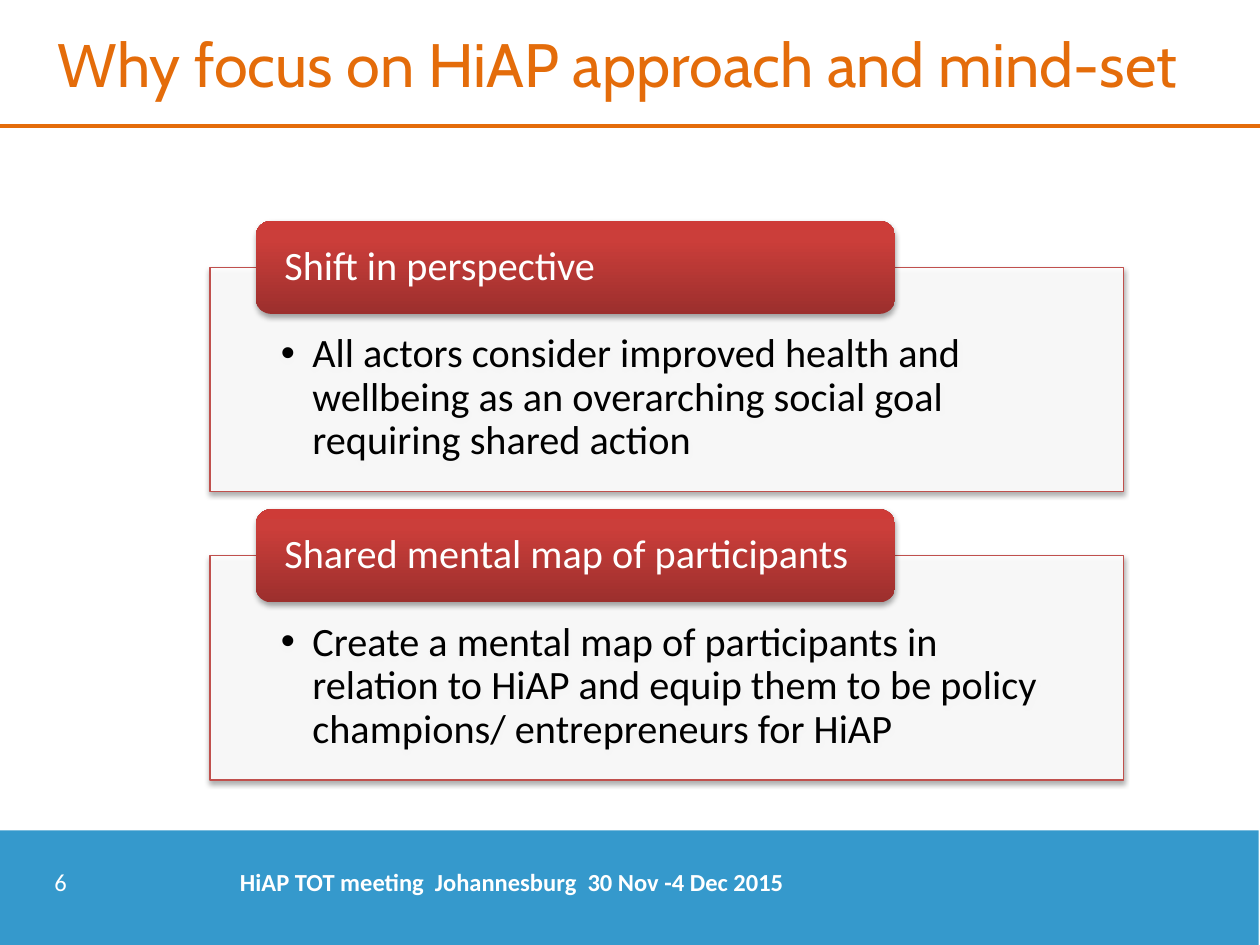
from lxml import etree
from pptx import Presentation
from pptx.dml.color import RGBColor
from pptx.enum.shapes import MSO_CONNECTOR, MSO_SHAPE
from pptx.enum.text import MSO_ANCHOR, PP_ALIGN
from pptx.oxml.ns import qn
from pptx.util import Pt

RECTANGLE, ROUNDED = MSO_SHAPE.RECTANGLE, MSO_SHAPE.ROUNDED_RECTANGLE
TOP, MIDDLE = MSO_ANCHOR.TOP, MSO_ANCHOR.MIDDLE
LEFT, CENTER = PP_ALIGN.LEFT, PP_ALIGN.CENTER

TITLE = "Why focus on HiAP approach and mind-set "
FOOTER = " HiAP TOT meeting  Johannesburg  30 Nov -4 Dec 2015"
PAGE_NUMBER = "6"
TOPICS = [
    ("Shift in perspective",
     "All actors consider improved health and wellbeing as an overarching "
     "social goal requiring shared action"),
    ("Shared mental map of participants",
     "Create a mental map of participants in relation to HiAP and equip them "
     "to be policy champions/ entrepreneurs for HiAP"),
]

ORANGE, BLUE, RED = "E46C0A", "3599CC", "C0504D"
WHITE, BLACK = "FFFFFF", "000000"
HEADER_STOPS = [(0, "9C2F2D"), (80, "CB3E3A"), (100, "CE3B37")]
INSETS = (7.2, 3.6, 7.2, 3.6)

SLIDE_WIDTH, SLIDE_HEIGHT = 720, 540
PANEL_LEFT, PANEL_TOP, PANEL_WIDTH, PANEL_HEIGHT = 120, 152.8, 522, 128.2
HEADER_LEFT, HEADER_WIDTH, HEADER_HEIGHT = 146.1, 365.4, 53.14
TOPIC_STEP = 164.8


def color(value):
    return RGBColor.from_string(value)


def add_element(parent, tag, **attributes):
    element = etree.SubElement(parent, qn(tag))
    for name, value in attributes.items():
        element.set(name, str(value))
    return element


def add_shape(slide, kind, box, fill=None, line=None):
    shape = slide.shapes.add_shape(kind, *map(Pt, box))
    shape.shadow.inherit = False
    if fill:
        shape.fill.solid()
        shape.fill.fore_color.rgb = color(fill)
    if line:
        shape.line.color.rgb = color(line)
        shape.line.width = Pt(0.75)
    else:
        shape.line.fill.background()
    return shape


def add_shadow(shape):
    effects = shape._element.spPr.find(qn("a:effectLst"))
    shadow = add_element(effects, "a:outerShdw", blurRad=Pt(3.1), dist=Pt(1.8),
                         dir=5400000, rotWithShape=0)
    shadow_color = add_element(shadow, "a:srgbClr", val=BLACK)
    add_element(shadow_color, "a:alpha", val=35000)


def fill_gradient(shape, stops):
    shape.fill.gradient()
    shape.fill.gradient_angle = 90
    stop_list = shape._element.spPr.find(qn("a:gradFill")).find(qn("a:gsLst"))
    for stop in list(stop_list):
        stop_list.remove(stop)
    for position, value in stops:
        stop = add_element(stop_list, "a:gs", pos=position * 1000)
        add_element(stop, "a:srgbClr", val=value)


def write(shape, text, size, value, font="Calibri", bold=False, align=LEFT,
          anchor=TOP, insets=INSETS, spacing=None, bullet=False):
    frame = shape.text_frame
    frame.word_wrap = True
    frame.vertical_anchor = anchor
    frame.margin_left, frame.margin_top, frame.margin_right, frame.margin_bottom = map(Pt, insets)
    paragraph = frame.paragraphs[0]
    paragraph.alignment = align
    if spacing:
        paragraph.line_spacing = spacing
    if bullet:
        properties = paragraph._p.get_or_add_pPr()
        properties.set("marL", str(Pt(18)))
        properties.set("indent", str(Pt(-18)))
        add_element(properties, "a:buFont", typeface="Arial")
        add_element(properties, "a:buChar", char="•")
    run = paragraph.add_run()
    run.text = text
    run.font.name = font
    run.font.size = Pt(size)
    run.font.bold = bold
    run.font.color.rgb = color(value)


def add_text(slide, box, *content, **style):
    write(slide.shapes.add_textbox(*map(Pt, box)), *content, **style)


def add_topic(slide, top, heading, body):
    panel = add_shape(slide, RECTANGLE, (PANEL_LEFT, top, PANEL_WIDTH, PANEL_HEIGHT), WHITE, RED)
    fill_color = panel._element.spPr.find(qn("a:solidFill"))[0]
    add_element(fill_color, "a:alpha", val=90000)
    add_shadow(panel)
    write(panel, body, 23, BLACK, insets=(40.5, 37.5, 40.5, 12.8), spacing=0.9, bullet=True)

    header = add_shape(slide, ROUNDED, (HEADER_LEFT, top - HEADER_HEIGHT / 2,
                                        HEADER_WIDTH, HEADER_HEIGHT))
    fill_gradient(header, HEADER_STOPS)
    add_shadow(header)
    write(header, heading, 23, WHITE, anchor=MIDDLE, insets=(13.8, 0, 13.8, 0), spacing=0.9)


def main():
    presentation = Presentation()
    presentation.slide_width, presentation.slide_height = Pt(SLIDE_WIDTH), Pt(SLIDE_HEIGHT)
    slide = presentation.slides.add_slide(presentation.slide_layouts[6])

    add_shape(slide, RECTANGLE, (-0.7, 474.5, SLIDE_WIDTH, 65.5), BLUE)
    rule = slide.shapes.add_connector(MSO_CONNECTOR.STRAIGHT, 0, Pt(72), Pt(SLIDE_WIDTH), Pt(72))
    rule.line.color.rgb = color(ORANGE)
    rule.line.width = Pt(2.25)
    add_element(rule._element.spPr, "a:effectLst")

    add_text(slide, (90, 492, 402, 34.5), FOOTER, 14, WHITE, bold=True, align=CENTER)
    add_text(slide, (24, 492, 60, 34.5), PAGE_NUMBER, 14, WHITE)
    add_text(slide, (-18, 0, 750, 72), TITLE, 35, ORANGE, font="Cabin", align=CENTER, anchor=MIDDLE)

    for index, (heading, body) in enumerate(TOPICS):
        add_topic(slide, PANEL_TOP + index * TOPIC_STEP, heading, body)

    presentation.save("out.pptx")


if __name__ == "__main__":
    main()
